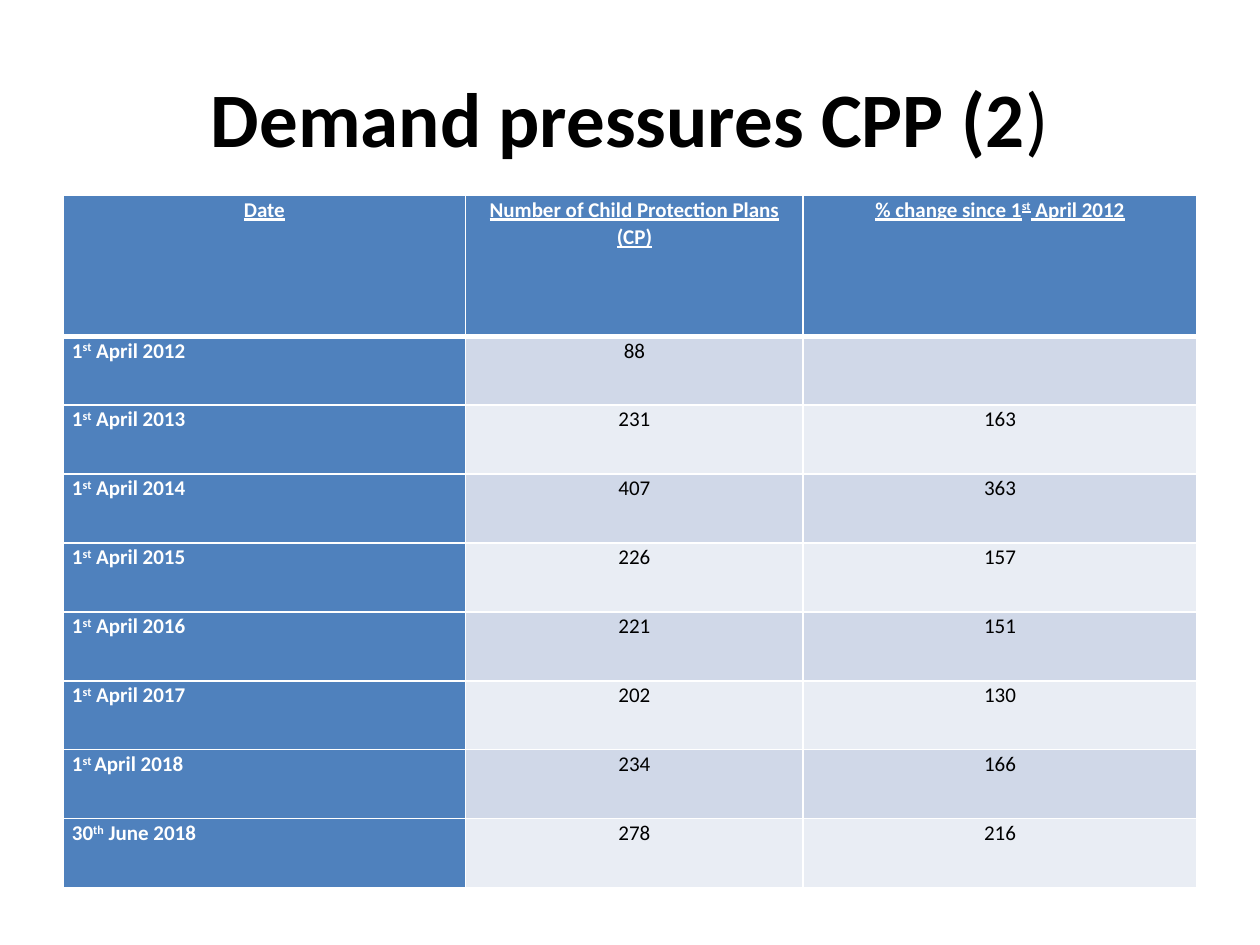
from lxml.etree import SubElement
from pptx import Presentation
from pptx.dml.color import RGBColor
from pptx.enum.text import MSO_ANCHOR, PP_ALIGN
from pptx.oxml.ns import qn
from pptx.util import Cm, Pt

COLORS = {
    "heading": "4F81BD",
    "band_dark": "D0D8E8",
    "band_light": "E9EDF4",
    "border": "FFFFFF",
    "light_text": "FFFFFF",
    "dark_text": "000000",
}
FONT = "Calibri"
COLUMN_WIDTHS = [8.12, 6.8, 7.94]
HEADER_HEIGHT, ROW_HEIGHT = 2.84, 1.39

# Text between bars is superscript
ROWS = [
    ("Date", "Number of Child Protection Plans (CP)", "% change since 1|st| April 2012"),
    ("1|st| April 2012", "88", ""),
    ("1|st| April 2013", "231", "163"),
    ("1|st| April 2014", "407", "363"),
    ("1|st| April 2015", "226", "157"),
    ("1|st| April 2016", "221", "151"),
    ("1|st| April 2017", "202", "130"),
    ("1|st |April 2018", "234", "166"),
    ("30|th| June 2018", "278", "216"),
]


def style_run(run, size, color, bold=False, underline=False):
    run.font.name = FONT
    run.font.size = Pt(size)
    run.font.bold = bold
    run.font.underline = underline
    run.font.color.rgb = RGBColor.from_string(COLORS[color])


def add_title(slide):
    title = slide.shapes.add_textbox(Cm(1.27), Cm(0.76), Cm(22.86), Cm(3.18))
    frame = title.text_frame
    frame.word_wrap = True
    frame.vertical_anchor = MSO_ANCHOR.MIDDLE
    heading = frame.paragraphs[0]
    heading.alignment = PP_ALIGN.CENTER
    for words, bold in (("Demand pressures CPP (2", True), (")", False)):
        run = heading.add_run()
        run.text = words
        style_run(run, 44, "dark_text", bold)


def set_borders(cell, widths):
    """Add left, right, top and bottom lines, which come before the fill."""
    properties = cell._tc.get_or_add_tcPr()
    for position, (side, width) in enumerate(zip("LRTB", widths)):
        line = SubElement(properties, qn(f"a:ln{side}"), w=str(Pt(width)))
        fill = SubElement(line, qn("a:solidFill"))
        SubElement(fill, qn("a:srgbClr"), val=COLORS["border"])
        properties.insert(position, line)


def fill_cell(cell, words, row, column):
    is_header, is_date = row == 0, column == 0
    is_heading = is_header or is_date
    band = "band_dark" if row % 2 else "band_light"
    cell.fill.solid()
    cell.fill.fore_color.rgb = RGBColor.from_string(COLORS["heading" if is_heading else band])
    set_borders(cell, (1, 1, 3 if row == 1 else 1, 3 if is_header else 1))
    cell.margin_left = cell.margin_right = Cm(0.18)
    cell.margin_top = cell.margin_bottom = 0

    paragraph = cell.text_frame.paragraphs[0]
    paragraph.line_spacing = 1.07
    paragraph.alignment = PP_ALIGN.LEFT if is_date and not is_header else PP_ALIGN.CENTER
    if not words:
        return
    for index, piece in enumerate(words.split("|")):
        run = paragraph.add_run()
        run.text = piece
        style_run(run, 12, "light_text" if is_heading else "dark_text", is_heading, is_header)
        if index % 2:
            run.font._element.set("baseline", "30000")


def add_plans_table(slide):
    heights = [HEADER_HEIGHT] + [ROW_HEIGHT] * (len(ROWS) - 1)
    plans = slide.shapes.add_table(
        len(ROWS), len(COLUMN_WIDTHS), Cm(1.27), Cm(3.94),
        Cm(sum(COLUMN_WIDTHS)), Cm(sum(heights)),
    ).table
    for column, width in zip(plans.columns, COLUMN_WIDTHS):
        column.width = Cm(width)
    for row, height in zip(plans.rows, heights):
        row.height = Cm(height)
    for row, entries in enumerate(ROWS):
        for column, words in enumerate(entries):
            fill_cell(plans.cell(row, column), words, row, column)


def main():
    deck = Presentation()
    deck.slide_width, deck.slide_height = Cm(25.4), Cm(19.05)
    slide = deck.slides.add_slide(deck.slide_layouts[6])
    add_title(slide)
    add_plans_table(slide)
    deck.save("out.pptx")


if __name__ == "__main__":
    main()
